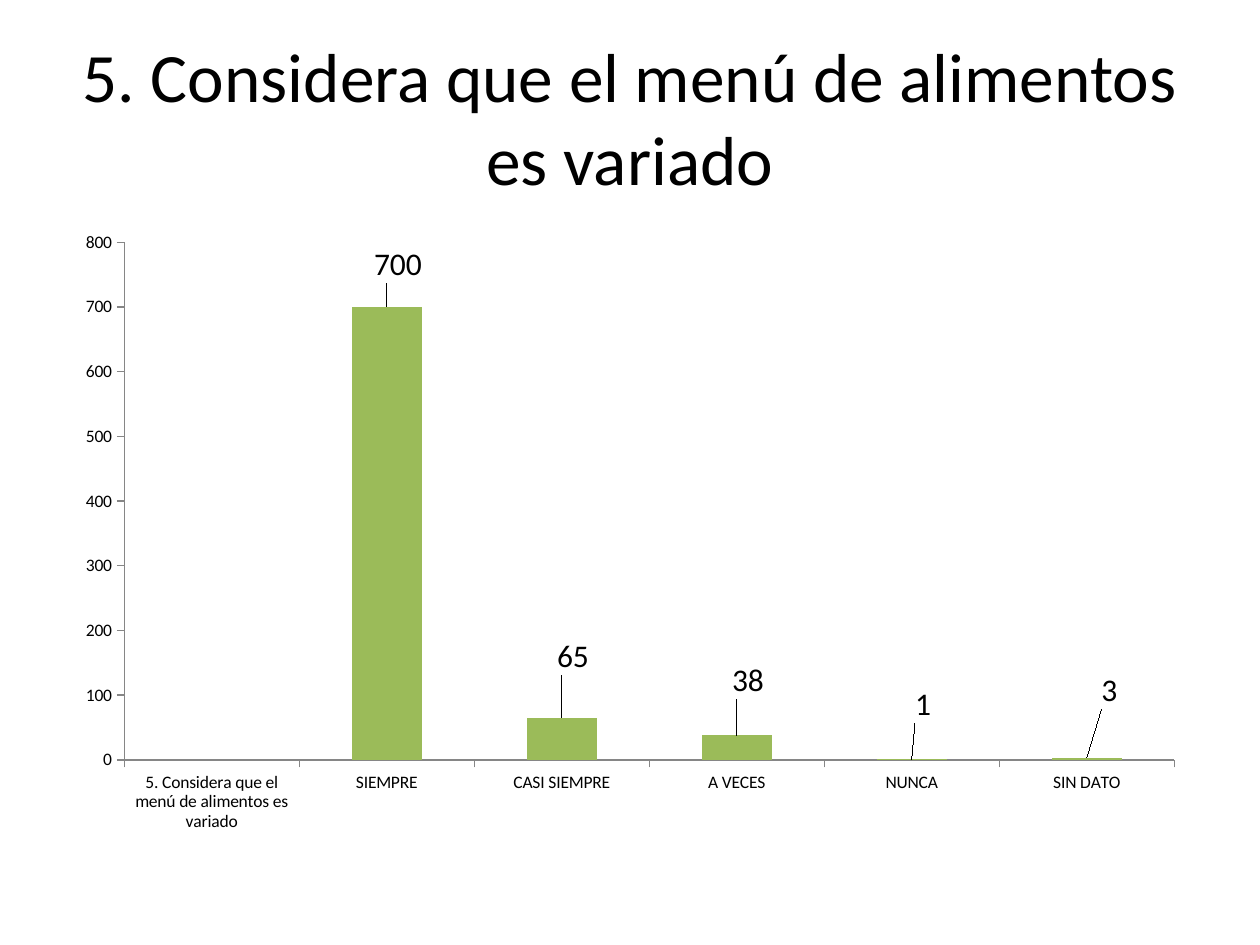
from dataclasses import dataclass

from lxml import etree
from pptx import Presentation
from pptx.chart.data import CategoryChartData
from pptx.dml.color import RGBColor
from pptx.enum.chart import XL_CHART_TYPE, XL_LABEL_POSITION, XL_TICK_MARK
from pptx.enum.text import MSO_ANCHOR, PP_ALIGN
from pptx.oxml.ns import qn
from pptx.util import Inches, Pt

COLUMN = XL_CHART_TYPE.COLUMN_CLUSTERED
OUTSIDE_END = XL_LABEL_POSITION.OUTSIDE_END
TICK_OUT = XL_TICK_MARK.OUTSIDE
MIDDLE = MSO_ANCHOR.MIDDLE
CENTER = PP_ALIGN.CENTER


@dataclass(frozen=True)
class Theme:
    font: str = "Calibri"
    text: RGBColor = RGBColor(0x00, 0x00, 0x00)
    bar: RGBColor = RGBColor(0x9B, 0xBB, 0x59)
    axis: RGBColor = RGBColor(0x86, 0x86, 0x86)
    title_size: float = 39.6
    axis_size: float = 10
    label_size: float = 18


THEME = Theme()
QUESTION = "5. Considera que el menú de alimentos es variado"
# Category, answers, label shift as a share of the chart (x, y)
ANSWERS = [
    (QUESTION, None, None),
    ("SIEMPRE", 700, (0.01, -0.03)),
    ("CASI SIEMPRE", 65, (0.01, -0.06)),
    ("A VECES", 38, (0.01, -0.05)),
    ("NUNCA", 1, (0.01, -0.05)),
    ("SIN DATO", 3, (0.02, -0.07)),
]


def style_font(font, size):
    font.name = THEME.font
    font.size = Pt(size)
    font.color.rgb = THEME.text


def add_title(s, text, left, top, width, height):
    tb = s.shapes.add_textbox(Inches(left), Inches(top), Inches(width), Inches(height))
    tf = tb.text_frame
    tf.word_wrap = True
    tf.vertical_anchor = MIDDLE
    p = tf.paragraphs[0]
    p.alignment = CENTER
    r = p.add_run()
    r.text = text
    style_font(r.font, THEME.title_size)


def manual_layout(**values):
    layout = etree.Element(qn("c:layout"))
    manual = etree.SubElement(layout, qn("c:manualLayout"))
    for name, value in values.items():
        etree.SubElement(manual, qn(f"c:{name}")).set("val", str(value))
    return layout


def style_axis(axis):
    axis.has_major_gridlines = False
    axis.major_tick_mark = TICK_OUT
    axis.format.line.color.rgb = THEME.axis
    style_font(axis.tick_labels.font, THEME.axis_size)


def add_labels(series):
    for i, (_, value, _) in enumerate(ANSWERS):
        if value is not None:
            label = series.points[i].data_label
            style_font(label.font, THEME.label_size)
            label.position = OUTSIDE_END
    # Shift each label away from its bar
    for idx in series._element.xpath("c:dLbls/c:dLbl/c:idx"):
        x, y = ANSWERS[int(idx.get("val"))][2]
        idx.addnext(manual_layout(x=x, y=y))


def add_answer_chart(s, left, top, width, height):
    data = CategoryChartData()
    data.categories = [name for name, _, _ in ANSWERS]
    data.add_series("Series 1", [value for _, value, _ in ANSWERS])
    chart = s.shapes.add_chart(COLUMN, Inches(left), Inches(top),
                               Inches(width), Inches(height), data).chart
    chart.has_legend = False
    chart.has_title = False
    style_font(chart.font, THEME.axis_size)

    # Axes
    style_axis(chart.category_axis)
    style_axis(chart.value_axis)
    chart.value_axis.minimum_scale = 0
    chart.value_axis.maximum_scale = 800
    chart.value_axis.major_unit = 100

    # Bars
    plot = chart.plots[0]
    plot.gap_width = 150
    plot.vary_by_categories = False
    series = plot.series[0]
    series.format.fill.solid()
    series.format.fill.fore_color.rgb = THEME.bar
    add_labels(series)

    # Plot area inside the chart
    area = chart._chartSpace.xpath("c:chart/c:plotArea")[0]
    for old in area.findall(qn("c:layout")):
        area.remove(old)
    area.insert(0, manual_layout(layoutTarget="inner", xMode="edge", yMode="edge",
                                 x=0.054, y=0.035, w=0.926, h=0.83))


def main():
    prs = Presentation()
    prs.slide_width, prs.slide_height = Inches(10), Inches(7.5)
    s = prs.slides.add_slide(prs.slide_layouts[6])
    add_title(s, QUESTION, 0.5, 0.3, 9, 1.25)
    add_answer_chart(s, 0.5, 1.75, 9, 4.95)
    prs.save("out.pptx")


if __name__ == "__main__":
    main()
